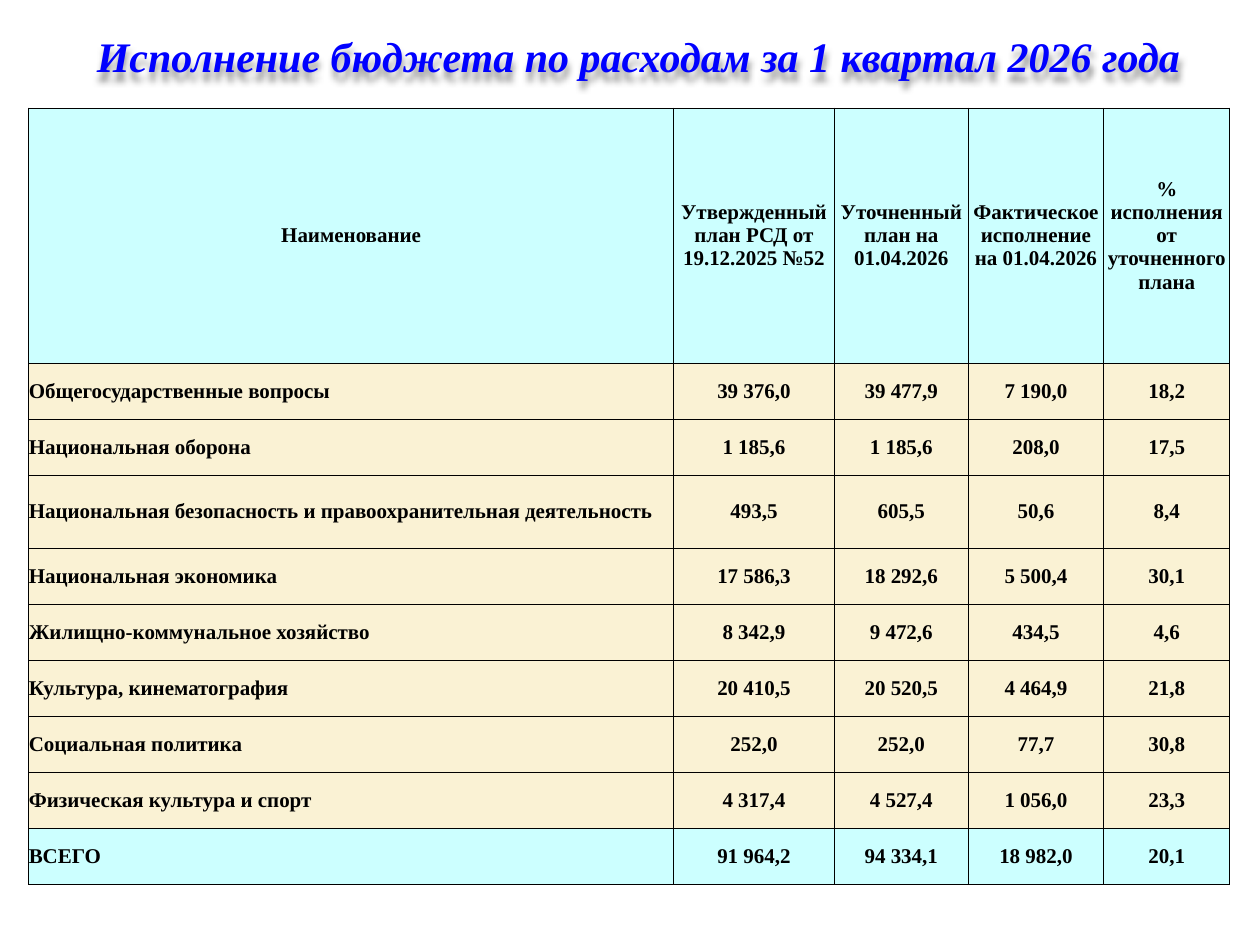
from dataclasses import dataclass

from pptx import Presentation
from pptx import oxml
from pptx import util as u
from pptx.dml.color import RGBColor
from pptx.enum import text
from pptx.oxml import ns


@dataclass(frozen=True)
class Theme:
    font: str = "Times New Roman"
    title_size: int = 24
    table_size: int = 12
    title_color: str = "0000FF"
    text_color: str = "000000"
    accent_fill: str = "CCFFFF"
    body_fill: str = "FAF2D4"
    border_color: str = "000000"
    border_width: float = 0.5


HEADERS = [
    "Наименование",
    "Утвержденный план РСД от 19.12.2025 №52",
    "Уточненный план на 01.04.2026",
    "Фактическое исполнение на 01.04.2026",
    "% исполнения от уточненного плана",
]
EXPENSES = [
    ["Общегосударственные вопросы", "39 376,0", "39 477,9", "7 190,0", "18,2"],
    ["Национальная оборона", "1 185,6", "1 185,6", "208,0", "17,5"],
    ["Национальная безопасность и правоохранительная деятельность",
     "493,5", "605,5", "50,6", "8,4"],
    ["Национальная экономика", "17 586,3", "18 292,6", "5 500,4", "30,1"],
    ["Жилищно-коммунальное хозяйство", "8 342,9", "9 472,6", "434,5", "4,6"],
    ["Культура, кинематография", "20 410,5", "20 520,5", "4 464,9", "21,8"],
    ["Социальная политика", "252,0", "252,0", "77,7", "30,8"],
    ["Физическая культура и спорт", "4 317,4", "4 527,4", "1 056,0", "23,3"],
]
TOTAL = ["ВСЕГО", "91 964,2", "94 334,1", "18 982,0", "20,1"]

COLUMN_WIDTHS = [13, 3.24, 2.7, 2.73, 2.54]
HEADER_HEIGHT, ROW_HEIGHT, TALL_ROW_HEIGHT = 5.14, 1.13, 1.47
TALL_ROW = 3


class SlideBuilder:
    def __init__(self, slide, theme):
        self.slide = slide
        self.theme = theme

    def format_text(self, paragraph, size, color, alignment, italic=False):
        paragraph.alignment = alignment
        for run in paragraph.runs:
            run.font.name = self.theme.font
            run.font.size = u.Pt(size)
            run.font.bold = True
            run.font.italic = italic
            run.font.color.rgb = RGBColor.from_string(color)

    def title(self, wording, left, top, width, height):
        shape = self.slide.shapes.title
        shape.left, shape.top = u.Cm(left), u.Cm(top)
        shape.width, shape.height = u.Cm(width), u.Cm(height)
        frame = shape.text_frame
        frame.text = wording
        frame.word_wrap = True
        frame.auto_size = text.MSO_AUTO_SIZE.NONE
        frame.vertical_anchor = text.MSO_ANCHOR.TOP
        self.format_text(frame.paragraphs[0], self.theme.title_size,
                         self.theme.title_color, text.PP_ALIGN.CENTER, italic=True)
        # Soft shadow below the letters
        shape.fill.background()
        shape._element.spPr.append(oxml.parse_xml(
            f'<a:effectLst {ns.nsdecls("a")}>'
            '<a:outerShdw blurRad="50800" dist="50800" dir="5400000" algn="t" rotWithShape="0">'
            '<a:srgbClr val="000000"><a:alpha val="40000"/></a:srgbClr>'
            '</a:outerShdw></a:effectLst>'))

    def table(self, rows, left, top, widths, heights):
        table = self.slide.shapes.add_table(
            len(rows), len(widths), u.Cm(left), u.Cm(top),
            u.Cm(sum(widths)), u.Cm(sum(heights))).table
        table.first_row = table.horz_banding = False
        for column, width in zip(table.columns, widths):
            column.width = u.Cm(width)
        for row, height in zip(table.rows, heights):
            row.height = u.Cm(height)
        last_row = len(rows) - 1
        for i, values in enumerate(rows):
            fill = self.theme.accent_fill if i in (0, last_row) else self.theme.body_fill
            for j, wording in enumerate(values):
                is_name = i > 0 and j == 0
                alignment = text.PP_ALIGN.LEFT if is_name else text.PP_ALIGN.CENTER
                self.cell(table.cell(i, j), wording, fill, alignment)

    def cell(self, cell, wording, fill, alignment):
        cell.text_frame.text = wording
        cell.vertical_anchor = text.MSO_ANCHOR.MIDDLE
        cell.margin_left = cell.margin_right = cell.margin_top = cell.margin_bottom = 0
        cell.fill.solid()
        cell.fill.fore_color.rgb = RGBColor.from_string(fill)
        self.format_text(cell.text_frame.paragraphs[0], self.theme.table_size,
                         self.theme.text_color, alignment)
        # Borders come before the fill in the cell properties
        properties = cell._tc.get_or_add_tcPr()
        for position, side in enumerate("LRTB"):
            properties.insert(position, oxml.parse_xml(
                f'<a:ln{side} {ns.nsdecls("a")} w="{u.Pt(self.theme.border_width)}">'
                f'<a:solidFill><a:srgbClr val="{self.theme.border_color}"/></a:solidFill>'
                f'</a:ln{side}>'))


def main():
    presentation = Presentation()
    presentation.slide_width, presentation.slide_height = u.Cm(25.4), u.Cm(19.05)
    title_only = presentation.slide_layouts[5]
    builder = SlideBuilder(presentation.slides.add_slide(title_only), Theme())

    # Heading
    builder.title("Исполнение бюджета по расходам за 1 квартал 2026 года",
                  0.67, 0.48, 24.4, 1.2)

    # Budget table: header, expense sections, total
    rows = [HEADERS, *EXPENSES, TOTAL]
    heights = [HEADER_HEIGHT] + [ROW_HEIGHT] * (len(rows) - 1)
    heights[TALL_ROW] = TALL_ROW_HEIGHT
    builder.table(rows, 0.58, 2.18, COLUMN_WIDTHS, heights)

    presentation.save("out.pptx")


if __name__ == "__main__":
    main()
